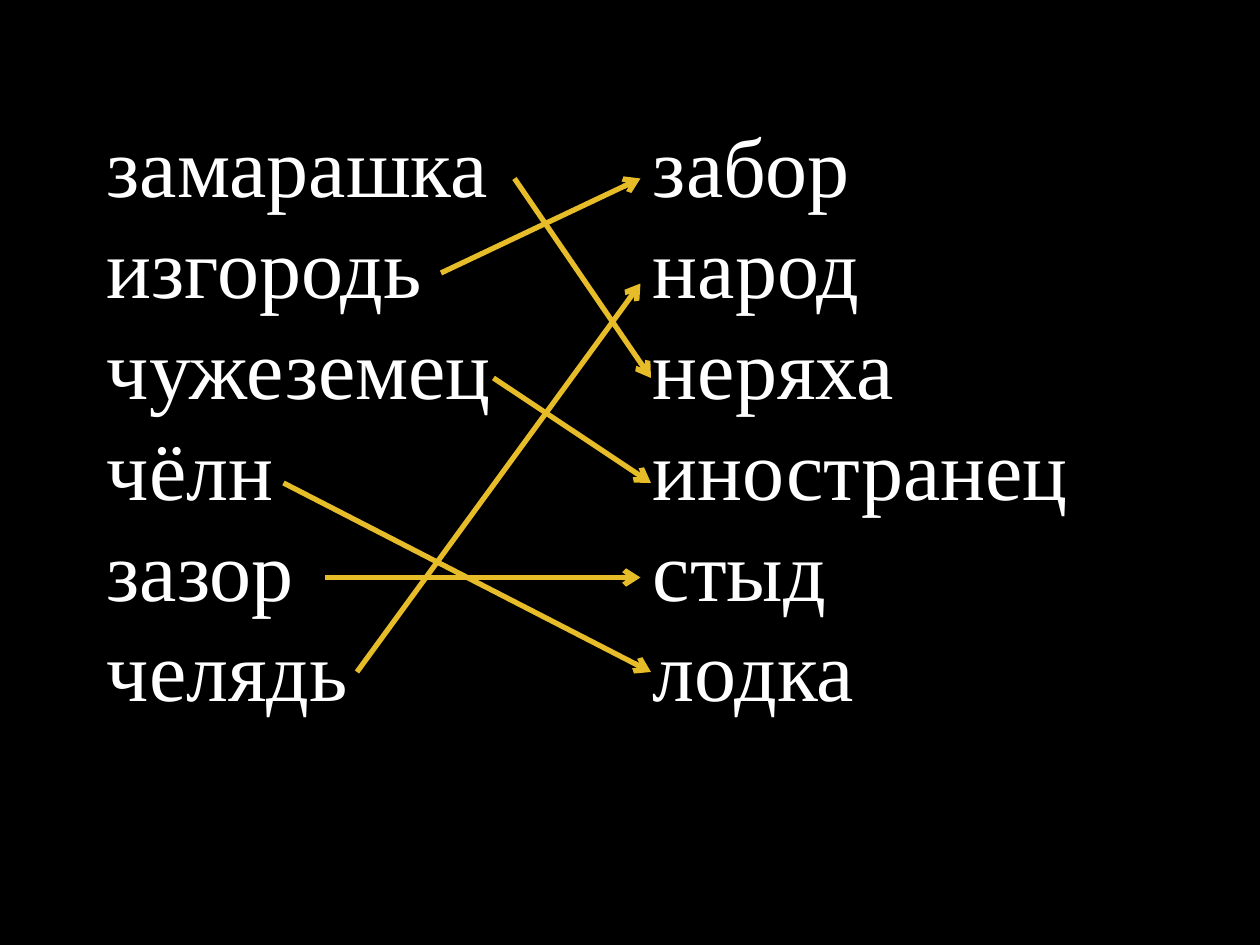
"""Builds a word-matching slide: two columns of words joined by arrows."""
from typing import NamedTuple

from lxml.etree import SubElement
from pptx import Presentation
from pptx.dml.color import RGBColor
from pptx.enum.shapes import MSO_CONNECTOR as Connector
from pptx.enum.text import MSO_ANCHOR as Anchor
from pptx.oxml.ns import qn
from pptx.slide import Slide
from pptx.util import Inches, Length, Pt

BLACK, WHITE, GOLD = "000000", "FFFFFF", "E7BC29"
FONT = "Times New Roman"
UNITS_PER_INCH = 12


class WordColumn(NamedTuple):
    """A column of words, placed on the grid."""
    col: float
    width: float
    words: tuple[str, ...]


class Arrow(NamedTuple):
    """An arrow from one grid point to another."""
    col: float
    row: float
    to_col: float
    to_row: float


COLUMN_TOP, COLUMN_HEIGHT = 10, 59.4
COLUMNS = (
    WordColumn(9, 47, ("замарашка", "изгородь", "чужеземец", "чёлн", "зазор", "челядь")),
    WordColumn(61, 53.4, ("забор", "народ", "неряха", "иностранец", "стыд", "лодка")),
)
ARROWS = (
    Arrow(34, 64, 61, 27),
    Arrow(47, 36, 62, 46),
    Arrow(42, 26, 61, 17),
    Arrow(49, 17, 62, 36),
    Arrow(27, 46, 62, 64),
    Arrow(31, 55, 61, 55),
)


def grid(units: float) -> Length:
    """Turn grid units into a length."""
    return Inches(units / UNITS_PER_INCH)


def paint(color_format, color: str) -> None:
    """Set a colour from a hex string."""
    color_format.rgb = RGBColor.from_string(color)


def add_words(slide: Slide, column: WordColumn) -> None:
    """Add a text box with one word to a paragraph."""
    box = slide.shapes.add_textbox(
        grid(column.col), grid(COLUMN_TOP), grid(column.width), grid(COLUMN_HEIGHT))
    tf = box.text_frame
    tf.word_wrap = True
    tf.vertical_anchor = Anchor.TOP
    tf.margin_top = Inches(0.07)
    for i, word in enumerate(column.words):
        p = tf.add_paragraph() if i else tf.paragraphs[0]
        p.line_spacing = Pt(57.6)
        r = p.add_run()
        r.text = word
        r.font.name = FONT
        r.font.size = Pt(48)
        paint(r.font.color, WHITE)


def add_arrow(slide: Slide, arrow: Arrow) -> None:
    """Add a gold connector with an open arrowhead at its end."""
    line = slide.shapes.add_connector(Connector.STRAIGHT, *map(grid, arrow))
    line.line.width = Pt(3)
    line.line.fill.solid()
    paint(line.line.fill.fore_color, GOLD)
    sp_pr = line._element.spPr
    SubElement(sp_pr.find(qn("a:ln")), qn("a:tailEnd"), type="arrow")
    SubElement(sp_pr, qn("a:effectLst"))


def main() -> None:
    """Build and save the slide."""
    prs = Presentation()
    prs.slide_width, prs.slide_height = Inches(10), Inches(7.5)
    slide = prs.slides.add_slide(prs.slide_layouts[6])
    fill = slide.background.fill
    fill.solid()
    paint(fill.fore_color, BLACK)
    for column in COLUMNS:
        add_words(slide, column)
    for arrow in ARROWS:
        add_arrow(slide, arrow)
    prs.save("out.pptx")


if __name__ == "__main__":
    main()
